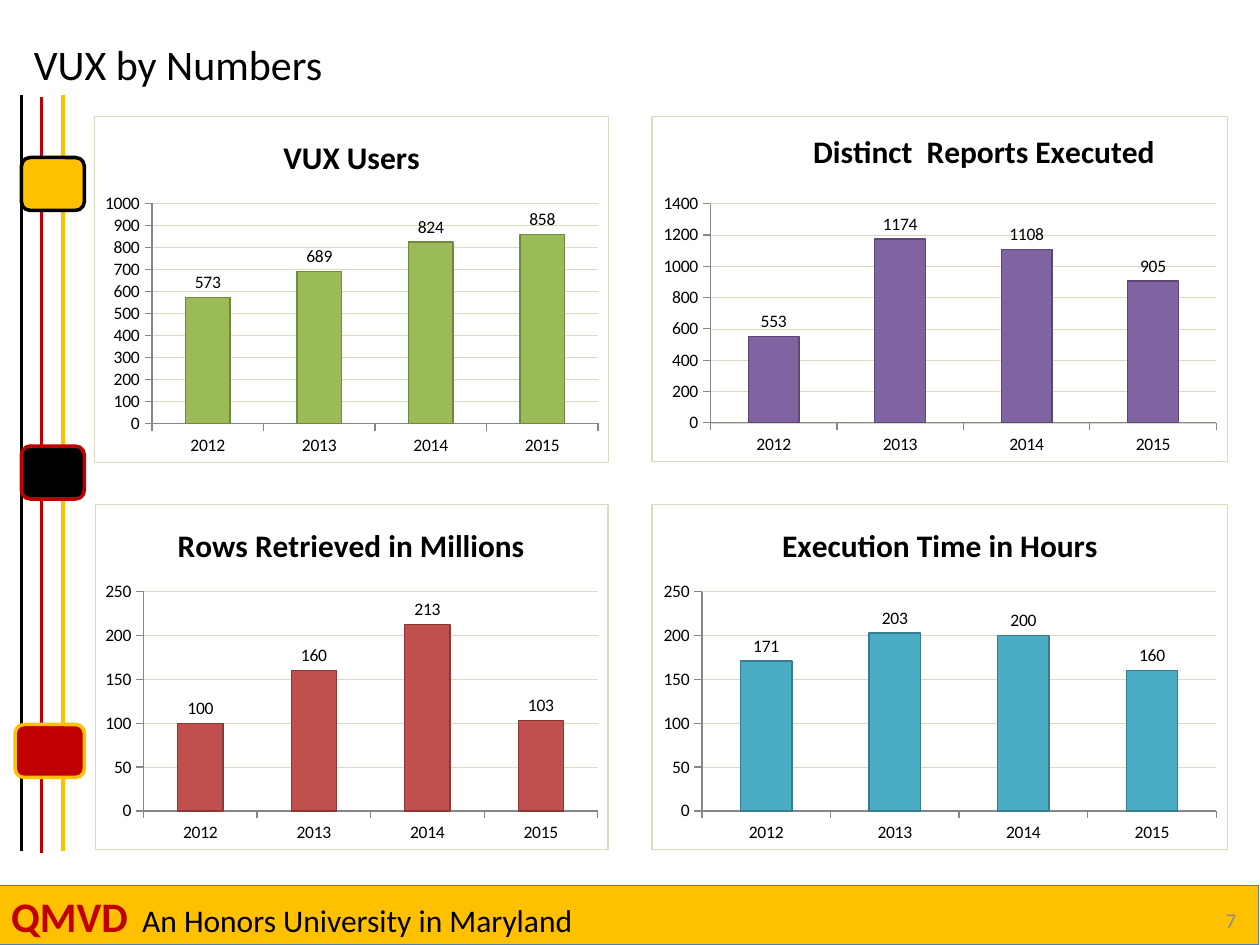
from typing import NamedTuple, Optional

from lxml.etree import SubElement
from pptx import Presentation
from pptx.chart.data import CategoryChartData
from pptx.dml.color import RGBColor
from pptx.enum.chart import XL_CHART_TYPE as ChartType
from pptx.enum.chart import XL_LABEL_POSITION as LabelPosition
from pptx.enum.chart import XL_TICK_MARK as TickMark
from pptx.enum.shapes import MSO_CONNECTOR as Connector
from pptx.enum.shapes import MSO_SHAPE as Shape
from pptx.enum.text import MSO_ANCHOR as Anchor
from pptx.enum.text import PP_ALIGN as Align
from pptx.oxml import parse_xml
from pptx.oxml.ns import nsdecls, qn
from pptx.util import Inches, Pt

FONT = "Calibri"
BLACK = RGBColor(0x00, 0x00, 0x00)
RED = RGBColor(0xC0, 0x00, 0x00)
GOLD = RGBColor(0xFF, 0xC0, 0x00)
BLUE = RGBColor(0x4B, 0x7E, 0xBC)
GRAY = RGBColor(0x8C, 0x8C, 0x8C)
SAND = RGBColor(0xDD, 0xD9, 0xC3)
AXIS_GRAY = RGBColor(0x86, 0x86, 0x86)

YEARS = ("2012", "2013", "2014", "2015")
CHART_LEFTS, CHART_WIDTHS = (0.75, 5.17), (4.08, 4.58)
CHART_TOPS, CHART_HEIGHT = (0.92, 4), 2.75


class Rail(NamedTuple):
    x: float
    top: float
    color: RGBColor


class Bead(NamedTuple):
    left: float
    top: float
    width: float
    fill: RGBColor
    line: RGBColor


class BarChart(NamedTuple):
    title: str
    values: tuple[int, ...]
    fill: RGBColor
    line: RGBColor
    maximum: int
    step: int
    border: float = 0.75
    title_at: Optional[tuple[float, float]] = None


RAILS = (Rail(0.17, 0.75, BLACK), Rail(0.33, 0.77, RED), Rail(0.5, 0.75, GOLD))
BEADS = (
    Bead(0.17, 1.25, 0.5, GOLD, BLACK),
    Bead(0.17, 3.54, 0.5, BLACK, RED),
    Bead(0.12, 5.75, 0.55, RED, GOLD),
)
CHARTS = (
    BarChart("VUX Users", (573, 689, 824, 858),
             RGBColor(0x9B, 0xBB, 0x59), RGBColor(0x71, 0x89, 0x3F), 1000, 100, 0.25),
    BarChart("Distinct  Reports Executed", (553, 1174, 1108, 905),
             RGBColor(0x80, 0x64, 0xA2), RGBColor(0x5C, 0x47, 0x76), 1400, 200,
             title_at=(0.27, 0.02)),
    BarChart("Rows Retrieved in Millions", (100, 160, 213, 103),
             RGBColor(0xC0, 0x50, 0x4D), RGBColor(0x8C, 0x38, 0x36), 250, 50),
    BarChart("Execution Time in Hours", (171, 203, 200, 160),
             RGBColor(0x4B, 0xAC, 0xC6), RGBColor(0x35, 0x7D, 0x91), 250, 50),
)


def add_span(para, text: str, size: float, color: RGBColor, bold: bool = False) -> None:
    span = para.add_run()
    span.text = text
    span.font.name = FONT
    span.font.size = Pt(size)
    span.font.bold = bold
    span.font.color.rgb = color


def add_block(page, shape: Shape, left: float, top: float, width: float, height: float,
              fill: RGBColor, line: RGBColor, weight: float):
    block = page.shapes.add_shape(
        shape, Inches(left), Inches(top), Inches(width), Inches(height))
    block.shadow.inherit = False
    block.fill.solid()
    block.fill.fore_color.rgb = fill
    block.line.color.rgb = line
    block.line.width = Pt(weight)
    return block


def add_label(page, left: float, top: float, width: float, height: float,
              text: str, size: float, color: RGBColor, align: Align) -> None:
    box = page.shapes.add_textbox(Inches(left), Inches(top), Inches(width), Inches(height))
    box.text_frame.word_wrap = True
    box.text_frame.vertical_anchor = Anchor.MIDDLE
    para = box.text_frame.paragraphs[0]
    para.alignment = align
    add_span(para, text, size, color)


def add_rail(page, rail: Rail) -> None:
    line = page.shapes.add_connector(
        Connector.STRAIGHT, Inches(rail.x), Inches(rail.top),
        Inches(rail.x), Inches(rail.top + 6))
    line.line.color.rgb = rail.color
    line.line.width = Pt(2)
    SubElement(line._element.spPr, qn("a:effectLst"))


def add_footer(page) -> None:
    band = add_block(page, Shape.RECTANGLE, -0.01, 7.03, 10, 0.47, GOLD, BLUE, 0.75)
    band.text_frame.vertical_anchor = Anchor.MIDDLE
    para = band.text_frame.paragraphs[0]
    para.alignment = Align.LEFT
    # A tab stop separates the name from the motto
    tabs = SubElement(para._p.get_or_add_pPr(), qn("a:tabLst"))
    SubElement(tabs, qn("a:tab"), pos=str(Inches(1.04)), algn="l")
    add_span(para, "QMVD", 24, RED, bold=True)
    add_span(para, "\tAn Honors University in Maryland", 18, BLACK)


def add_bar_chart(page, item: BarChart, left: float, top: float, width: float) -> None:
    data = CategoryChartData(number_format="0")
    data.categories = YEARS
    data.add_series(item.title, item.values)
    chart = page.shapes.add_chart(
        ChartType.COLUMN_CLUSTERED, Inches(left), Inches(top),
        Inches(width), Inches(CHART_HEIGHT), data).chart
    chart.font.name = FONT
    chart.font.size = Pt(10)
    chart.font.color.rgb = BLACK
    chart.has_legend = False

    # Title
    title = chart.chart_title
    add_span(title.text_frame.paragraphs[0], item.title, 18, BLACK, bold=True)
    title.include_in_layout = False
    if item.title_at:
        x, y = item.title_at
        layout = parse_xml(
            f'<c:layout {nsdecls("c")}><c:manualLayout>'
            '<c:xMode val="edge"/><c:yMode val="edge"/>'
            f'<c:x val="{x}"/><c:y val="{y}"/></c:manualLayout></c:layout>')
        for old in title._element.findall(qn("c:layout")):
            title._element.remove(old)
        title._element.find(qn("c:tx")).addnext(layout)

    # Frame around the chart
    chart._chartSpace.find(qn("c:chart")).addnext(parse_xml(
        f'<c:spPr {nsdecls("c", "a")}><a:noFill/><a:ln w="{Pt(item.border)}">'
        f'<a:solidFill><a:srgbClr val="{SAND}"/></a:solidFill></a:ln></c:spPr>'))

    # Axes
    for axis in (chart.category_axis, chart.value_axis):
        axis.major_tick_mark = TickMark.OUTSIDE
        axis.minor_tick_mark = TickMark.NONE
        axis.format.line.color.rgb = AXIS_GRAY
    scale = chart.value_axis
    scale.minimum_scale, scale.maximum_scale = 0, item.maximum
    scale.major_unit = item.step
    scale.major_gridlines.format.line.color.rgb = SAND
    scale.major_gridlines.format.line.width = Pt(0.25)

    # Bars and their values
    plot = chart.plots[0]
    plot.gap_width = 150
    plot.vary_by_categories = False
    plot.has_data_labels = True
    plot.data_labels.show_value = True
    plot.data_labels.position = LabelPosition.OUTSIDE_END
    bars = plot.series[0].format
    bars.fill.solid()
    bars.fill.fore_color.rgb = item.fill
    bars.line.color.rgb = item.line
    bars.line.width = Pt(0.75)


def main() -> None:
    deck = Presentation()
    deck.slide_width, deck.slide_height = Inches(10), Inches(7.5)
    page = deck.slides.add_slide(deck.slide_layouts[6])

    # Footer and side ornament
    add_footer(page)
    for rail in RAILS:
        add_rail(page, rail)
    for bead in BEADS:
        add_block(page, Shape.ROUNDED_RECTANGLE, bead.left, bead.top, bead.width, 0.42,
                  bead.fill, bead.line, 2)

    # Two by two grid of charts
    for index, item in enumerate(CHARTS):
        row, column = divmod(index, 2)
        add_bar_chart(page, item, CHART_LEFTS[column], CHART_TOPS[row], CHART_WIDTHS[column])

    # Page number and heading
    add_label(page, 7.58, 7.1, 2.33, 0.4, "7", 12, GRAY, Align.RIGHT)
    add_label(page, 0.17, 0.17, 9, 0.67, "VUX by Numbers", 24, BLACK, Align.LEFT)
    deck.save("out.pptx")


if __name__ == "__main__":
    main()
